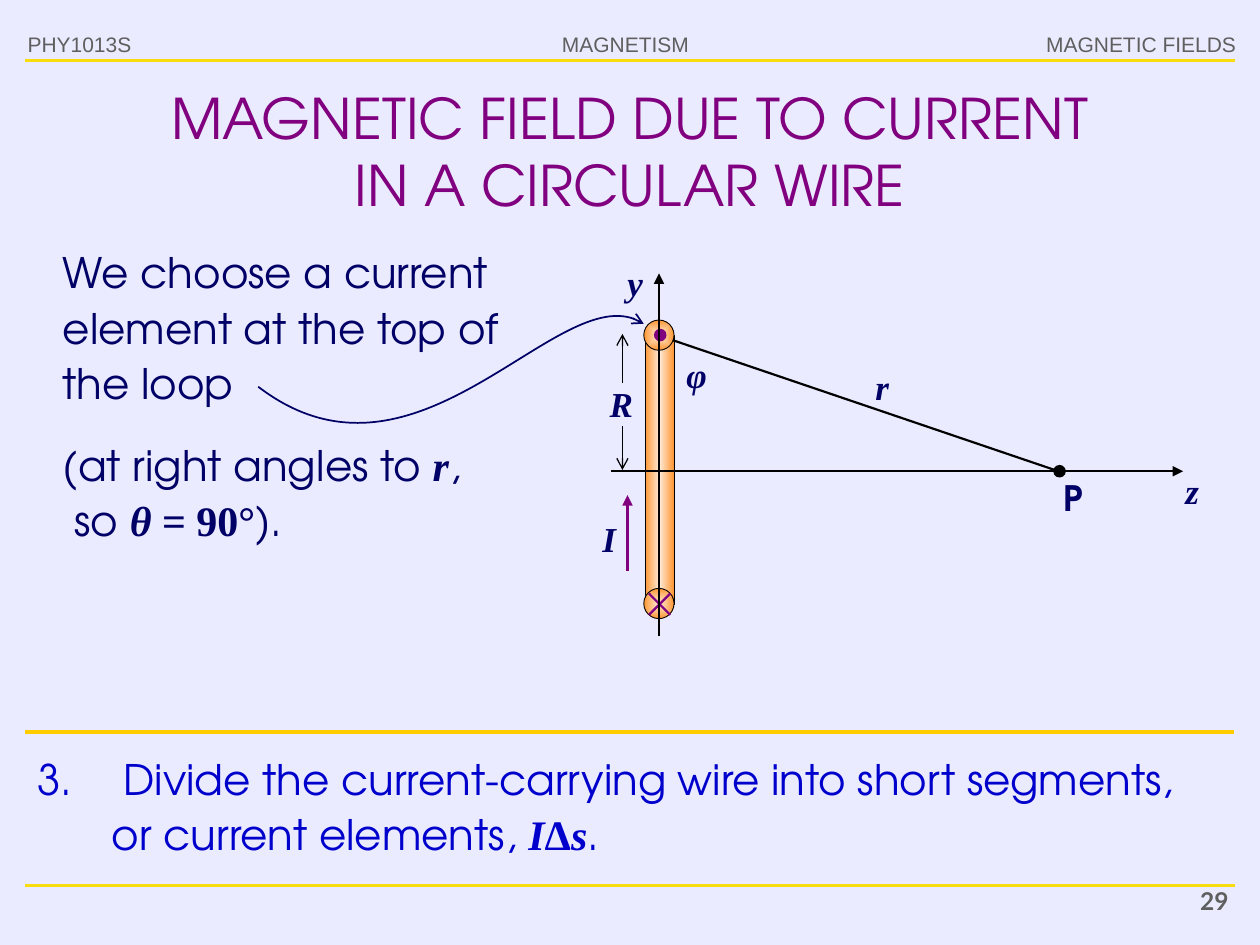
from pptx import Presentation
from pptx.dml.color import RGBColor
from pptx.enum.shapes import MSO_CONNECTOR as LINK, MSO_SHAPE as KIND
from pptx.enum.text import MSO_ANCHOR as ANCHOR, PP_ALIGN as ALIGN
from pptx.oxml import parse_xml
from pptx.oxml.ns import nsdecls, qn
from pptx.util import Inches, Pt
from lxml.etree import SubElement

PALE = RGBColor(0xEB, 0xEB, 0xFF)
GREY = RGBColor(0x5F, 0x5F, 0x5F)
YELLOW = RGBColor(0xF8, 0xDC, 0x0E)
GOLD = RGBColor(0xFF, 0xCC, 0x00)
PURPLE = RGBColor(0x80, 0x00, 0x80)
NAVY = RGBColor(0x00, 0x00, 0x66)
BLUE = RGBColor(0x00, 0x00, 0xCC)
BLACK = RGBColor(0x00, 0x00, 0x00)
SANS, SERIF = "TeX Gyre Adventor", "Times New Roman"

deck = Presentation()
deck.slide_width, deck.slide_height = Inches(10), Inches(7.5)
# Grid of 100 columns by 75 rows
COL, ROW = deck.slide_width / 100, deck.slide_height / 75
slide = deck.slides.add_slide(deck.slide_layouts[5])
slide.background.fill.solid()
slide.background.fill.fore_color.rgb = PALE
shapes = slide.shapes


def text(box, *paras, shape=None, size=20, color=NAVY, font=SANS, align=ALIGN.LEFT,
         pad=True, wrap=True, left=0, hang=0, space=1.1, gap=0, anchor=ANCHOR.TOP):
    """Each paragraph is a list of (words, style); style holds m(ath), b(old), i(talic)."""
    x, y, w, h = box
    shape = shape or shapes.add_textbox(0, 0, 0, 0)
    shape.left, shape.top = int(x * COL), int(y * ROW)
    shape.width, shape.height = int(w * COL), int(h * ROW)
    frame = shape.text_frame
    frame.word_wrap, frame.vertical_anchor = wrap, anchor
    if not pad:
        frame.margin_left = frame.margin_right = 0
        frame.margin_top = frame.margin_bottom = 0
    for n, runs in enumerate(paras):
        para = frame.add_paragraph() if n else frame.paragraphs[0]
        para.alignment, para.line_spacing = align, space
        props = para._p.get_or_add_pPr()
        props.set("marL", str(int(left * COL)))
        props.set("indent", str(int(-hang * COL)))
        if n:
            para.space_before = Pt(gap)
        for words, style in runs:
            if words == "\n":
                para.add_line_break()
                continue
            run = para.add_run()
            run.text = words
            run.font.name = SERIF if "m" in style else font
            run.font.size, run.font.color.rgb = Pt(size), color
            run.font.bold, run.font.italic = "b" in style, "i" in style


def stroke(shape, color, width, tip=None):
    shape.line.color.rgb, shape.line.width = color, Pt(width)
    if tip:
        SubElement(shape.line._ln, qn("a:tailEnd"), type=tip)
    SubElement(shape._element.spPr, qn("a:effectLst"))


# Header and page number
for box, words, side, wrap in (
        ((1.2, 2, 11.8, 3.2), "PHY1013S", ALIGN.LEFT, True),
        ((43.6, 2, 12.1, 3), "MAGNETISM", ALIGN.CENTER, False),
        ((82, 2, 17.1, 3), "MAGNETIC FIELDS", ALIGN.RIGHT, True)):
    text(box, [(words, "")], size=12, color=GREY, font="Arial", align=side,
         wrap=wrap, space=1)
text((88.2, 69.8, 10.3, 3.7), [("29", "b")], size=14, color=GREY, font="Lato",
     align=ALIGN.RIGHT, space=1)

# Title
text((5, 6.1, 90, 11.7),
     [("MAGNETIC FIELD DUE TO CURRENT", ""), ("\n", ""), ("IN A CIRCULAR WIRE", "")],
     shape=shapes.title, size=32, color=PURPLE, align=ALIGN.CENTER, space=1,
     anchor=ANCHOR.MIDDLE)

# Body and numbered step
text((2, 18.7, 42.7, 25.2),
     [("We choose a current element at the top of the loop", "")],
     [("(at right angles to ", ""), ("r", "mbi"), (",", ""), ("\n", ""), (" so ", ""),
      ("θ", "mbi"), (" = 90°", "mb"), (").", "")],
     size=24, left=2, gap=15)
text((2, 58.9, 96, 9.8),
     [("3.\t Divide the current-carrying wire into short segments, "
       "or current elements, ", ""),
      ("I", "mbi"), ("Δ", "mb"), ("s", "mbi"), (".", "")],
     size=24, color=BLUE, left=5.9, hang=5.9)

# Wire: bar and its two cut ends
BAR = (((0, "FF9632"), (50, "FFEBD8"), (100, "FF9632")), '<a:lin ang="0"/>')
END = (((0, "FFEBD8"), (100, "FF9632")),
       '<a:path path="shape"><a:fillToRect l="50000" t="50000" r="50000" b="50000"/></a:path>')
for kind, (x, y, w, h), (stops, way) in (
        (KIND.RECTANGLE, (51.2, 26.6, 2.3, 21.4), BAR),
        (KIND.OVAL, (51.1, 46.7, 2.4, 2.4), END),
        (KIND.OVAL, (51.1, 25.4, 2.4, 2.4), END)):
    part = shapes.add_shape(kind, int(x * COL), int(y * ROW), int(w * COL), int(h * ROW))
    part.fill.background()
    marks = "".join(f'<a:gs pos="{pos * 1000}"><a:srgbClr val="{tone}"/></a:gs>'
                    for pos, tone in stops)
    props = part._element.spPr
    props.replace(props.find(qn("a:noFill")), parse_xml(
        f'<a:gradFill {nsdecls("a")}><a:gsLst>{marks}</a:gsLst>{way}</a:gradFill>'))
    stroke(part, BLACK, 0.5)

# Dots: current towards the viewer, and point P
for x, y, tone in ((51.9, 26.1, PURPLE), (83.6, 36.9, BLACK)):
    dot = shapes.add_shape(KIND.OVAL, int(x * COL), int(y * ROW), int(COL), int(ROW))
    dot.fill.solid()
    dot.fill.fore_color.rgb = tone
    dot.line.fill.background()
    dot.shadow.inherit = False

# Rules, axes, distances and current
for x1, y1, x2, y2, tone, width, tip in (
        (2, 4.8, 98, 4.8, YELLOW, 1.75, None),
        (2, 70.3, 98, 70.3, YELLOW, 1.75, None),
        (2, 58.1, 97.9, 58.1, GOLD, 2, None),
        (53.4, 27, 84, 37.4, BLACK, 1.25, None),
        (49.8, 45.3, 49.8, 39.3, PURPLE, 1.25, "triangle"),
        (53.2, 47.1, 51.5, 48.8, PURPLE, 1.25, None),
        (51.5, 47.1, 53.2, 48.8, PURPLE, 1.25, None),
        (49.4, 30.4, 49.4, 26.5, BLACK, 0.75, "arrow"),
        (49.4, 33.8, 49.4, 37.3, BLACK, 0.75, "arrow"),
        (48.5, 37.4, 93.9, 37.4, BLACK, 1.25, "triangle"),
        (52.3, 50.5, 52.3, 21.7, BLACK, 1.25, "triangle")):
    link = shapes.add_connector(LINK.STRAIGHT, int(x1 * COL), int(y1 * ROW),
                                int(x2 * COL), int(y2 * ROW))
    stroke(link, tone, width, tip)

# Symbols
for box, words, style in (((83.2, 37.5, 4, 3.9), "P", "b"),
                          ((54.1, 27.7, 2.4, 3.9), "φ", "mbi"),
                          ((46.1, 40.7, 4.5, 3.9), "I", "mbi"),
                          ((47.4, 30, 3.8, 4.7), "R", "mbi")):
    text(box, [(words, style)], align=ALIGN.CENTER, pad=False)
for box, words in (((66.5, 28.2, 5.3, 4.7), "r"),
                   ((46.8, 19.9, 7.2, 4.7), "y"),
                   ((91.1, 36.4, 5.7, 4.7), "z")):
    text(box, [(words, "mbi")], left=2)

# Curved pointer: the corner points become one Bezier segment
start, *rest = [(int(x * COL), int(y * ROW)) for x, y in
                ((20.5, 30.7), (32.9, 40.2), (44.7, 21.5), (51.1, 25.7))]
pen = shapes.build_freeform(*start)
pen.add_line_segments(rest, close=False)
curve = pen.convert_to_shape()
curve.fill.background()
route = next(curve._element.iter(qn("a:path")))
bend = SubElement(route, qn("a:cubicBezTo"))
for leg in route.findall(qn("a:lnTo")):
    bend.append(leg[0])
    route.remove(leg)
stroke(curve, NAVY, 1, "arrow")

deck.save("out.pptx")
